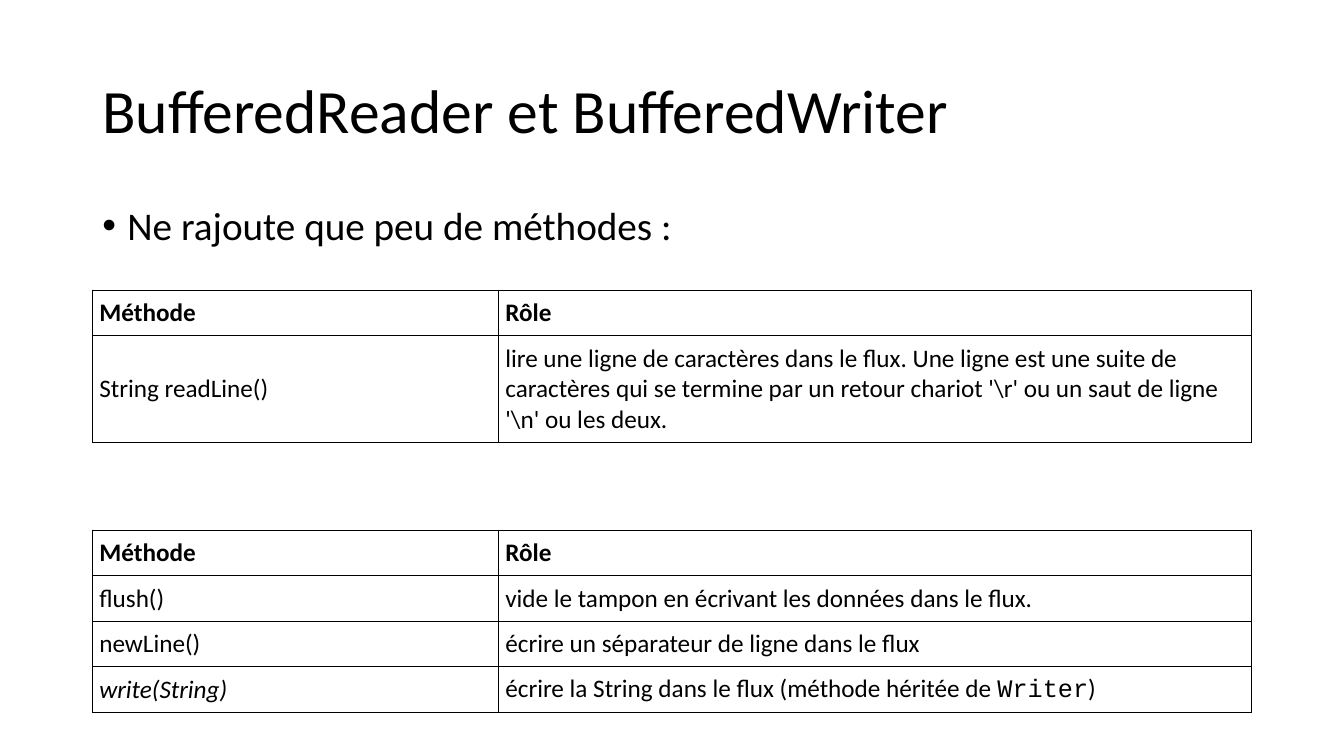
from dataclasses import dataclass

from lxml import etree
from pptx import Presentation
from pptx.dml.color import RGBColor
from pptx.enum import text
from pptx.oxml.ns import qn
from pptx.util import Pt


@dataclass(frozen=True)
class Theme:
    ink: RGBColor = RGBColor(0, 0, 0)
    font: str = "Calibri"
    code_font: str = "Courier New"
    title_size: int = 44
    bullet_size: int = 28
    table_size: int = 18


LEFT, WIDTH = 66, 828
COLUMN_WIDTHS = (290, 538)
ROW_HEIGHT = 32.5
CELL_INSET = 5

HEADING = ("Méthode", "Rôle")
READER_METHODS = [
    ("String readLine()",
     "lire une ligne de caractères dans le flux. Une ligne est une suite de "
     "caractères qui se termine par un retour chariot '\\r' ou un saut de "
     "ligne '\\n' ou les deux."),
]
# A cell is a string, or a list of (text, format) runs
WRITER_METHODS = [
    ("flush()", "vide le tampon en écrivant les données dans le flux."),
    ("newLine()", "écrire un séparateur de ligne dans le flux"),
    ([("write(String)", {"italic": True})],
     [("écrire la String dans le flux (méthode héritée de ", {}),
      ("Writer", {"name": Theme.code_font}),
      (")", {})]),
]


def set_all(target, values):
    for name, value in values.items():
        setattr(target, name, value)


class SlideBuilder:
    def __init__(self, deck, theme):
        self.theme = theme
        self.slide = deck.slides.add_slide(deck.slide_layouts[5])

    def add_words(self, paragraph, content, size, **extra):
        runs = [(content, {})] if isinstance(content, str) else content
        for words, own_format in runs:
            run = paragraph.add_run()
            run.text = words
            base = {"name": self.theme.font, "size": Pt(size), **extra}
            set_all(run.font, {**base, **own_format})
            run.font.color.rgb = self.theme.ink

    def title(self, words, top, height):
        heading = self.slide.shapes.title
        set_all(heading, {"left": Pt(LEFT), "top": Pt(top),
                          "width": Pt(WIDTH), "height": Pt(height)})
        set_all(heading.text_frame, {
            "word_wrap": True,
            "auto_size": text.MSO_AUTO_SIZE.NONE,
            "vertical_anchor": text.MSO_ANCHOR.MIDDLE,
        })
        paragraph = heading.text_frame.paragraphs[0]
        set_all(paragraph, {"alignment": text.PP_ALIGN.LEFT,
                            "line_spacing": 0.9})
        self.add_words(paragraph, words, self.theme.title_size)

    def bullet(self, words, top, height):
        body = self.slide.shapes.add_textbox(
            Pt(LEFT), Pt(top), Pt(WIDTH), Pt(height))
        body.text_frame.word_wrap = True
        paragraph = body.text_frame.paragraphs[0]
        set_all(paragraph, {"line_spacing": 0.9, "space_before": Pt(10)})
        self.add_words(paragraph, words, self.theme.bullet_size)
        # Hanging bullet
        properties = paragraph._p.get_or_add_pPr()
        properties.set("marL", str(Pt(18)))
        properties.set("indent", str(-Pt(18)))
        etree.SubElement(properties, qn("a:buFont"), typeface="Arial")
        etree.SubElement(properties, qn("a:buChar"), char="•")

    def border(self, cell):
        properties = cell._tc.get_or_add_tcPr()
        for side in ("lnL", "lnR", "lnT", "lnB"):
            line = etree.SubElement(properties, qn(f"a:{side}"), w=str(Pt(1)))
            fill = etree.SubElement(line, qn("a:solidFill"))
            etree.SubElement(fill, qn("a:srgbClr"), val=str(self.theme.ink))

    def method_table(self, methods, top, heights):
        rows = [HEADING, *methods]
        table = self.slide.shapes.add_table(
            len(rows), len(HEADING), Pt(LEFT), Pt(top),
            Pt(WIDTH), Pt(sum(heights))).table
        set_all(table, {"first_row": False, "horz_banding": False})
        for column, width in zip(table.columns, COLUMN_WIDTHS):
            column.width = Pt(width)
        for r, (contents, height) in enumerate(zip(rows, heights)):
            table.rows[r].height = Pt(height)
            for c, content in enumerate(contents):
                cell = table.cell(r, c)
                set_all(cell, {f"margin_{side}": Pt(CELL_INSET)
                               for side in ("left", "right", "top", "bottom")})
                cell.vertical_anchor = text.MSO_ANCHOR.MIDDLE
                self.border(cell)
                cell.fill.background()
                self.add_words(cell.text_frame.paragraphs[0], content,
                               self.theme.table_size, bold=r == 0)


def main():
    deck = Presentation()
    set_all(deck, {"slide_width": Pt(960), "slide_height": Pt(540)})
    builder = SlideBuilder(deck, Theme())

    # Title and introduction
    builder.title("BufferedReader et BufferedWriter", top=28.75, height=104.4)
    builder.bullet("Ne rajoute que peu de méthodes :", top=143.75, height=342.6)

    # Reader methods, then writer methods
    builder.method_table(READER_METHODS, 207.3, [ROW_HEIGHT, 76.5])
    builder.method_table(WRITER_METHODS, 378.7, [ROW_HEIGHT] * 4)

    deck.save("out.pptx")


if __name__ == "__main__":
    main()
